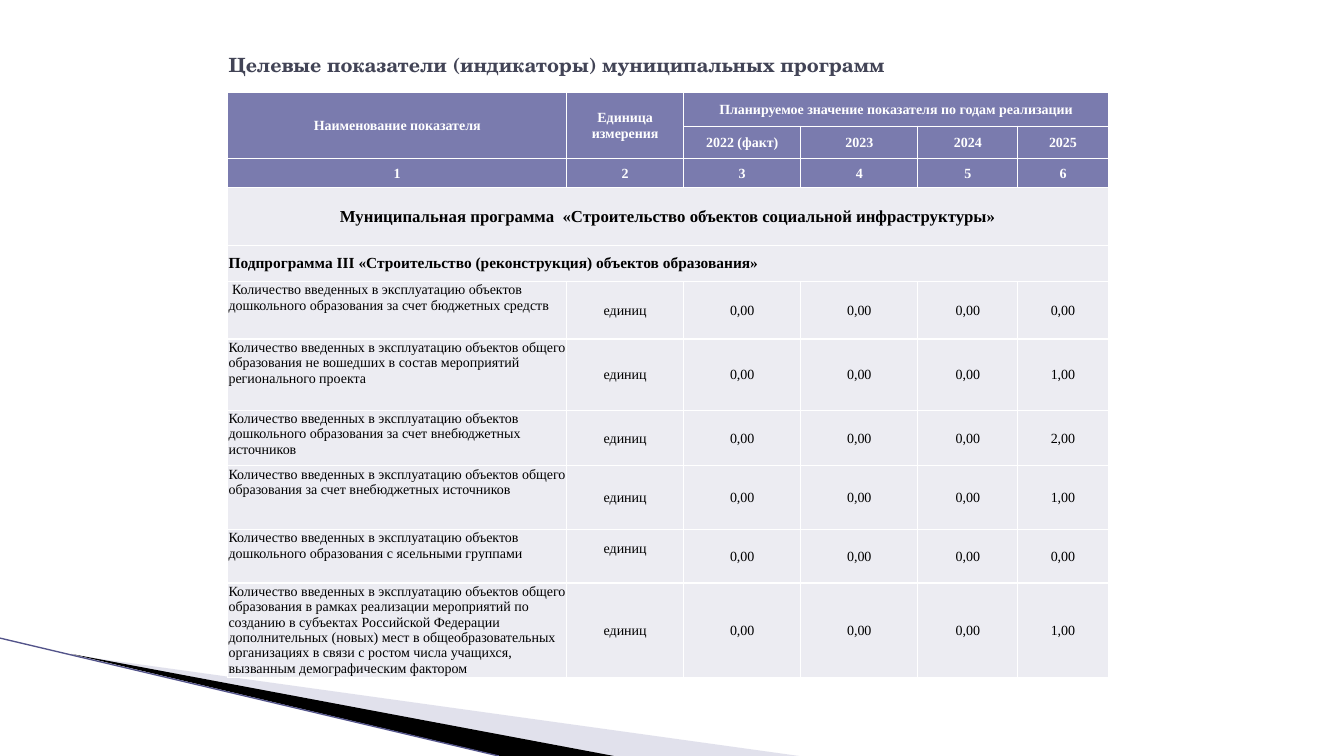
from dataclasses import dataclass

from lxml import etree
from pptx import Presentation
from pptx.dml.color import RGBColor
from pptx.enum.shapes import MSO_CONNECTOR
from pptx.enum.text import MSO_ANCHOR, PP_ALIGN
from pptx.oxml.ns import qn
from pptx.util import Cm, Pt

LEFT, CENTER = PP_ALIGN.LEFT, PP_ALIGN.CENTER
TOP, MIDDLE = MSO_ANCHOR.TOP, MSO_ANCHOR.MIDDLE
STRAIGHT = MSO_CONNECTOR.STRAIGHT

TITLE = "Целевые показатели (индикаторы) муниципальных программ"
NAME_HEAD, UNIT_HEAD = "Наименование показателя", "Единица измерения"
YEARS_HEAD = "Планируемое значение показателя по годам реализации"
YEARS = ["2022 (факт)", "2023", "2024", "2025"]
PROGRAM = "Муниципальная программа  «Строительство объектов социальной инфраструктуры»"
SUBPROGRAM = "Подпрограмма III «Строительство (реконструкция) объектов образования»"
UNIT = "единиц"
INDICATORS = [
    (" Количество введенных в эксплуатацию объектов дошкольного образования "
     "за счет бюджетных средств", ["0,00", "0,00", "0,00", "0,00"]),
    ("Количество введенных в эксплуатацию объектов общего образования "
     "не вошедших в состав мероприятий регионального проекта",
     ["0,00", "0,00", "0,00", "1,00"]),
    ("Количество введенных в эксплуатацию объектов дошкольного образования "
     "за счет внебюджетных источников", ["0,00", "0,00", "0,00", "2,00"]),
    ("Количество введенных в эксплуатацию объектов общего образования "
     "за счет внебюджетных источников", ["0,00", "0,00", "0,00", "1,00"]),
    ("Количество введенных в эксплуатацию объектов дошкольного образования "
     "с ясельными группами", ["0,00", "0,00", "0,00", "0,00"]),
    ("Количество введенных в эксплуатацию объектов общего образования "
     "в рамках реализации мероприятий по созданию в субъектах Российской Федерации "
     "дополнительных (новых) мест в общеобразовательных организациях в связи "
     "с ростом числа учащихся, вызванным демографическим фактором",
     ["0,00", "0,00", "0,00", "1,00"]),
]

# Lengths in centimetres
SLIDE_W, SLIDE_H = 33.87, 19.05
TITLE_BOX = (5.51, 0.76, 22.86, 1.75)
TABLE_LEFT, TABLE_TOP = 5.74, 2.34
COLS = [8.54, 2.95, 2.95, 2.95, 2.52, 2.28]
ROWS = [0.84, 0.81, 0.74, 1.45, 0.91, 1.45, 1.8, 1.4, 1.6, 1.35, 2.39]
INSET = 0.02
RAISED_ROW, RAISE = 9, 0.4
PALE_WEDGE = [(1.85, 16.51), (20.14, SLIDE_H), (15.44, SLIDE_H)]
DARK_WEDGE = [(1.8, 16.48), (15.47, SLIDE_H), (12.6, SLIDE_H)]
EDGE_LINE = [(0, 16.08), (12.57, SLIDE_H)]


@dataclass(frozen=True)
class Theme:
    title_font: str = "TeX Gyre Schola"
    body_font: str = "Times New Roman"
    title: str = "424456"
    header: str = "7A7BAE"
    body: str = "ECECF2"
    white: str = "FFFFFF"
    black: str = "000000"
    pale: str = "B6B6D1"
    edge: str = "53548A"
    title_size: float = 14
    program_size: float = 12
    subprogram_size: float = 11
    size: float = 10
    border: float = 1
    edge_width: float = 0.95


T = Theme()


def rgb(color):
    return RGBColor.from_string(color)


def write(tf, text, font=T.body_font, size=T.size, color=T.black, bold=False, align=CENTER):
    p = tf.paragraphs[0]
    p.alignment = align
    r = p.add_run()
    r.text = text
    r.font.name, r.font.size, r.font.bold = font, Pt(size), bold
    r.font.color.rgb = rgb(color)


def add_wedge(s, points, color, alpha=None):
    start, *rest = [(Cm(x), Cm(y)) for x, y in points]
    builder = s.shapes.build_freeform(*start)
    builder.add_line_segments(rest)
    sp = builder.convert_to_shape()
    sp.shadow.inherit = False
    sp.fill.solid()
    sp.fill.fore_color.rgb = rgb(color)
    sp.line.fill.background()
    if alpha:
        clr = sp.fill._xPr.find(qn("a:solidFill"))[0]
        etree.SubElement(clr, qn("a:alpha")).set("val", str(alpha * 1000))


def add_edge_line(s):
    (x1, y1), (x2, y2) = EDGE_LINE
    line = s.shapes.add_connector(STRAIGHT, Cm(x1), Cm(y1), Cm(x2), Cm(y2))
    line.line.color.rgb = rgb(T.edge)
    line.line.width = Pt(T.edge_width)
    etree.SubElement(line._element.spPr, qn("a:effectLst"))


def style_cell(cell, fill):
    """Set fill, insets and white borders on all four sides."""
    cell.fill.solid()
    cell.fill.fore_color.rgb = rgb(fill)
    cell.vertical_anchor = MIDDLE
    cell.margin_left = cell.margin_right = cell.margin_top = Cm(INSET)
    cell.margin_bottom = 0
    tc_pr = cell._tc.get_or_add_tcPr()
    for i, side in enumerate(("lnL", "lnR", "lnT", "lnB")):
        ln = etree.Element(qn(f"a:{side}"), w=str(Pt(T.border)))
        solid = etree.SubElement(ln, qn("a:solidFill"))
        etree.SubElement(solid, qn("a:srgbClr"), val=T.white)
        tc_pr.insert(i, ln)


def add_indicator_table(s):
    table = s.shapes.add_table(len(ROWS), len(COLS), Cm(TABLE_LEFT), Cm(TABLE_TOP),
                               Cm(sum(COLS)), Cm(sum(ROWS))).table
    table.first_row = table.horz_banding = False
    for col, width in zip(table.columns, COLS):
        col.width = Cm(width)
    for row, height in zip(table.rows, ROWS):
        row.height = Cm(height)
    for r in range(len(ROWS)):
        for c in range(len(COLS)):
            style_cell(table.cell(r, c), T.header if r < 3 else T.body)

    last = len(COLS) - 1
    for first, end in [((0, 0), (1, 0)), ((0, 1), (1, 1)), ((0, 2), (0, last)),
                       ((3, 0), (3, last)), ((4, 0), (4, last))]:
        table.cell(*first).merge(table.cell(*end))

    numbers = [str(n + 1) for n in range(len(COLS))]
    for r, c, texts in [(0, 0, [NAME_HEAD, UNIT_HEAD, YEARS_HEAD]), (1, 2, YEARS),
                        (2, 0, numbers)]:
        for i, text in enumerate(texts):
            write(table.cell(r, c + i).text_frame, text, color=T.white, bold=True)
    write(table.cell(3, 0).text_frame, PROGRAM, size=T.program_size, bold=True)
    write(table.cell(4, 0).text_frame, SUBPROGRAM, size=T.subprogram_size, bold=True, align=LEFT)

    for r, (name, values) in enumerate(INDICATORS, start=5):
        table.cell(r, 0).vertical_anchor = TOP
        write(table.cell(r, 0).text_frame, name, align=LEFT)
        for c, text in enumerate([UNIT, *values], start=1):
            write(table.cell(r, c).text_frame, text)
    table.cell(RAISED_ROW, 1).margin_bottom = Cm(RAISE)


def main():
    prs = Presentation()
    prs.slide_width, prs.slide_height = Cm(SLIDE_W), Cm(SLIDE_H)
    s = prs.slides.add_slide(prs.slide_layouts[5])

    add_wedge(s, PALE_WEDGE, T.pale, alpha=40)
    add_wedge(s, DARK_WEDGE, T.black)
    add_edge_line(s)

    title = s.shapes.title
    title.left, title.top, title.width, title.height = map(Cm, TITLE_BOX)
    title.text_frame.vertical_anchor = MIDDLE
    write(title.text_frame, TITLE, font=T.title_font, size=T.title_size,
          color=T.title, bold=True, align=LEFT)

    add_indicator_table(s)
    prs.save("out.pptx")


if __name__ == "__main__":
    main()
